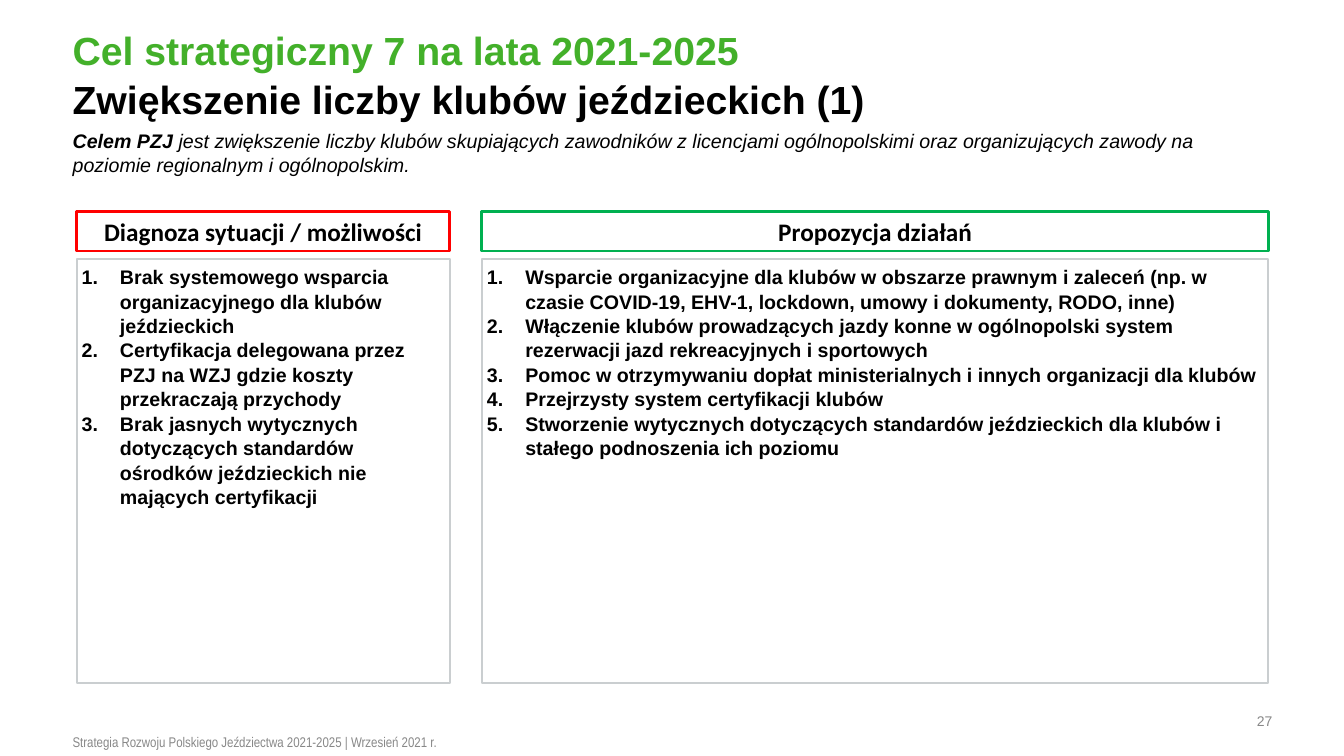
from lxml import etree
from pptx import Presentation
from pptx.dml.color import RGBColor
from pptx.enum.shapes import MSO_SHAPE
from pptx.enum.text import MSO_ANCHOR, MSO_AUTO_SIZE, PP_ALIGN
from pptx.oxml.ns import qn
from pptx.util import Inches, Pt

RECT = MSO_SHAPE.RECTANGLE
TOP, MIDDLE = MSO_ANCHOR.TOP, MSO_ANCHOR.MIDDLE
LEFT, CENTER, RIGHT = PP_ALIGN.LEFT, PP_ALIGN.CENTER, PP_ALIGN.RIGHT
NO_FIT = MSO_AUTO_SIZE.NONE

COLORS = {
    "black": "000000", "title": "43B02A", "muted": "888888",
    "frame": "CACED0", "diagnosis": "FF0000", "actions": "00B050",
}
COLS = {
    "title": (0.67, 12), "goal": (0.67, 11.81), "footer": (0.67, 8.66),
    "number": (12.41, 0.26), "diagnosis": (0.76, 3.7), "actions": (4.78, 7.8),
}
ROWS = {
    "title": (0.3, 0.85), "goal": (1.22, 0.57), "heading": (2.1, 0.39),
    "list": (2.57, 4.21), "number": (7.02, 0.27), "footer": (7.23, 0.27),
}
INSET, INDENT = 0.05, 0.38

DIAGNOSIS = [
    "Brak systemowego wsparcia organizacyjnego dla klubów jeździeckich",
    "Certyfikacja delegowana przez PZJ na WZJ gdzie koszty przekraczają przychody",
    "Brak jasnych wytycznych dotyczących standardów ośrodków jeździeckich "
    "nie mających certyfikacji",
]
ACTIONS = [
    "Wsparcie organizacyjne dla klubów w obszarze prawnym i zaleceń "
    "(np. w czasie COVID-19, EHV-1, lockdown, umowy i dokumenty, RODO, inne)",
    "Włączenie klubów prowadzących jazdy konne w ogólnopolski system "
    "rezerwacji jazd rekreacyjnych i sportowych",
    "Pomoc w otrzymywaniu dopłat ministerialnych i innych organizacji dla klubów",
    "Przejrzysty system certyfikacji klubów",
    "Stworzenie wytycznych dotyczących standardów jeździeckich dla klubów "
    "i stałego podnoszenia ich poziomu",
]


def cell(col, row):
    """Return left, top, width and height of a grid cell."""
    (x, w), (y, h) = COLS[col], ROWS[row]
    return [Inches(v) for v in (x, y, w, h)]


def place(sp, col, row):
    """Move a placeholder to a grid cell."""
    sp.left, sp.top, sp.width, sp.height = cell(col, row)
    return sp


def set_bullet(p, numbered):
    """Number a paragraph, or clear its inherited bullet."""
    pPr = p._p.get_or_add_pPr()
    indent = Inches(INDENT) if numbered else 0
    pPr.set("marL", str(indent))
    pPr.set("indent", str(-indent))
    if numbered:
        etree.SubElement(pPr, qn("a:buFont"), typeface="+mj-lt")
        etree.SubElement(pPr, qn("a:buAutoNum"), type="arabicPeriod")
    else:
        etree.SubElement(pPr, qn("a:buNone"))


def add_run(p, text, *, size, font="Arial", color="black", bold=False, italic=False):
    """Append a formatted run."""
    r = p.add_run()
    r.text = text
    r.font.name, r.font.size = font, Pt(size)
    r.font.bold, r.font.italic = bold, italic
    r.font.color.rgb = RGBColor.from_string(COLORS[color])


def write(sp, paragraphs, *, align=LEFT, anchor=MIDDLE, wrap=True, before=0,
          spacing=1.0, numbered=False, **fmt):
    """Fill a shape with paragraphs, each a list of (text, format) runs."""
    tf = sp.text_frame
    tf.auto_size, tf.word_wrap, tf.vertical_anchor = NO_FIT, wrap, anchor
    tf.margin_left = tf.margin_right = Inches(INSET)
    tf.margin_top = tf.margin_bottom = Inches(INSET)
    for i, runs in enumerate(paragraphs):
        p = tf.add_paragraph() if i else tf.paragraphs[0]
        p.alignment, p.line_spacing = align, spacing
        p.space_before, p.space_after = Pt(before), Pt(0)
        set_bullet(p, numbered)
        for text, own in runs:
            if text == "\n":
                p.add_line_break()
            else:
                add_run(p, text, **{**fmt, **own})


def add_label(s, col, row, text, **fmt):
    """Add a one-line text box."""
    write(s.shapes.add_textbox(*cell(col, row)), [[(text, {})]], **fmt)


def add_frame(s, col, row, color, width):
    """Add an outlined rectangle."""
    sp = s.shapes.add_shape(RECT, *cell(col, row))
    sp.shadow.inherit = False
    sp.fill.background()
    sp.line.color.rgb = RGBColor.from_string(COLORS[color])
    sp.line.width = Pt(width)


def add_panel(s, sp, col, heading, items):
    """Build a column with a framed heading and a numbered list."""
    add_frame(s, col, "list", "frame", 1.5)
    write(place(sp, col, "list"), [[(item, {})] for item in items],
          anchor=TOP, spacing=1.04, numbered=True, size=14, bold=True)
    add_frame(s, col, "heading", col, 2)
    add_label(s, col, "heading", heading, align=CENTER, size=18,
              font="Calibri", bold=True)


def main():
    """Build and save the slide."""
    prs = Presentation()
    prs.slide_width, prs.slide_height = Inches(13.33), Inches(7.5)
    s = prs.slides.add_slide(prs.slide_layouts.get_by_name("Comparison"))
    ph = {sp.placeholder_format.idx: sp for sp in s.placeholders}
    ph[3].element.getparent().remove(ph[3].element)

    write(place(ph[0], "title", "title"),
          [[("Cel strategiczny 7 na lata 2021-2025", {"color": "title"}),
            ("\n", {}),
            ("Zwiększenie liczby klubów jeździeckich (1)", {})]],
          spacing=1.04, size=28, bold=True)
    write(place(ph[1], "goal", "goal"),
          [[("Celem PZJ ", {"bold": True}),
            ("jest zwiększenie liczby klubów skupiających zawodników z licencjami "
             "ogólnopolskimi oraz organizujących zawody na poziomie regionalnym "
             "i ogólnopolskim.", {})]],
          anchor=TOP, before=3, spacing=1.04, size=14, italic=True)
    add_panel(s, ph[2], "diagnosis", "Diagnoza sytuacji / możliwości", DIAGNOSIS)
    add_panel(s, ph[4], "actions", "Propozycja działań", ACTIONS)
    add_label(s, "number", "number", "27", align=RIGHT, wrap=False,
              size=10, color="muted")
    add_label(s, "footer", "footer",
              "Strategia Rozwoju Polskiego Jeździectwa 2021-2025 | Wrzesień 2021 r.",
              size=10, font="Arial Narrow", color="muted")
    prs.save("out.pptx")


if __name__ == "__main__":
    main()
